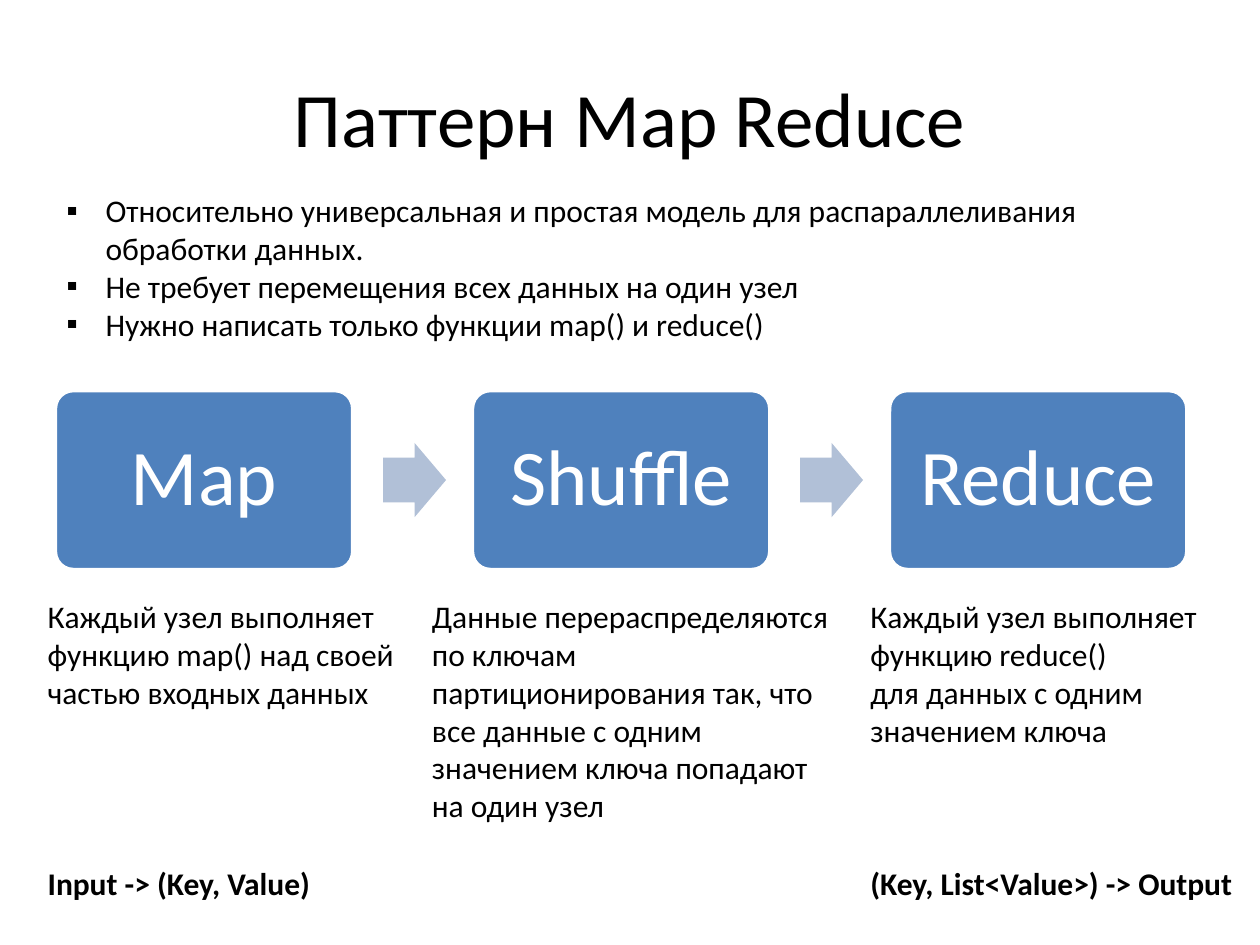
from lxml.etree import SubElement
from pptx import Presentation
from pptx.dml.color import RGBColor
from pptx.enum.shapes import MSO_SHAPE
from pptx.enum.text import MSO_ANCHOR, PP_ALIGN
from pptx.oxml.ns import qn
from pptx.util import Inches, Pt

TITLE = "Паттерн Map Reduce"
BULLETS = [
    "Относительно универсальная и простая модель для распараллеливания обработки данных.",
    "Не требует перемещения всех данных на один узел",
    "Нужно написать только функции map() и reduce()",
]
STEPS = [
    {"name": "Map", "left": 0.28, "width": 3.04, "height": 2.52,
     "lines": ["Каждый узел выполняет", "функцию map() над своей", "частью входных данных"],
     "signature": "Input -> (Key, Value)", "gap": 88},
    {"name": "Shuffle", "left": 3.33, "width": 3.4, "height": 1.92,
     "lines": ["Данные перераспределяются по ключам партиционирования так, "
               "что все данные с одним значением ключа попадают на один узел"]},
    {"name": "Reduce", "left": 6.81, "width": 3.19, "height": 2.52,
     "lines": ["Каждый узел выполняет функцию reduce()", "для данных с одним значением ключа"],
     "signature": "(Key, List<Value>) -> Output", "gap": 66},
]
BLACK, WHITE, BLUE, PALE = "000000", "FFFFFF", "4F81BD", "B1C0D7"
BOX_LEFT, BOX_TOP, BOX_W, BOX_H, STEP = 0.44, 3.1, 2.36, 1.42, 3.31
ARROW_W, ARROW_H, ARROW_OFFSET = 0.5, 0.59, 2.6


def rgb(value):
    return RGBColor.from_string(value)


def add_text(tf, lines, size=18, color=BLACK, align=PP_ALIGN.LEFT):
    tf.word_wrap = True
    paragraphs = []
    for i, line in enumerate(lines):
        p = tf.paragraphs[0] if i == 0 else tf.add_paragraph()
        p.alignment = align
        add_run(p, line, size, color)
        paragraphs.append(p)
    return paragraphs


def add_run(p, text, size, color, bold=False):
    r = p.add_run()
    r.text = text
    r.font.name = "Calibri"
    r.font.size = Pt(size)
    r.font.bold = bold
    r.font.color.rgb = rgb(color)


def add_box(s, left, top, width, height):
    return s.shapes.add_textbox(*map(Inches, (left, top, width, height))).text_frame


def add_shape(s, kind, left, top, width, height, fill, adjustments):
    sp = s.shapes.add_shape(kind, *map(Inches, (left, top, width, height)))
    sp.shadow.inherit = False
    sp.fill.solid()
    sp.fill.fore_color.rgb = rgb(fill)
    for i, value in enumerate(adjustments):
        sp.adjustments[i] = value
    return sp


def add_bullet(p):
    pPr = p._p.get_or_add_pPr()
    pPr.set("marL", str(Inches(0.31)))
    pPr.set("indent", str(-Inches(0.31)))
    SubElement(pPr, qn("a:buFont")).set("typeface", "Calibri")
    SubElement(pPr, qn("a:buChar")).set("char", "▪")


def main():
    prs = Presentation()
    prs.slide_width, prs.slide_height = Inches(10), Inches(7.5)
    s = prs.slides.add_slide(prs.slide_layouts[6])

    tf = add_box(s, 0.5, 0.3, 9, 1.25)
    tf.vertical_anchor = MSO_ANCHOR.MIDDLE
    add_text(tf, [TITLE], 44, align=PP_ALIGN.CENTER)

    for p in add_text(add_box(s, 0.43, 1.47, 9.06, 1.31), BULLETS):
        add_bullet(p)

    for i, step in enumerate(STEPS):
        left = BOX_LEFT + i * STEP
        sp = add_shape(s, MSO_SHAPE.ROUNDED_RECTANGLE, left, BOX_TOP, BOX_W, BOX_H, BLUE, [0.1])
        sp.line.color.rgb = rgb(WHITE)
        sp.line.width = Pt(2)
        sp.text_frame.vertical_anchor = MSO_ANCHOR.MIDDLE
        add_text(sp.text_frame, [step["name"]], 45, WHITE, PP_ALIGN.CENTER)[0].line_spacing = 0.9

        if i < len(STEPS) - 1:
            top = BOX_TOP + (BOX_H - ARROW_H) / 2
            arrow = add_shape(s, MSO_SHAPE.RIGHT_ARROW, left + ARROW_OFFSET, top,
                              ARROW_W, ARROW_H, PALE, [0.6, 0.5])
            arrow.line.fill.background()

        tf = add_box(s, step["left"], 4.69, step["width"], step["height"])
        add_text(tf, step["lines"])
        if "signature" in step:
            p = tf.add_paragraph()
            p.space_before = Pt(step["gap"])
            add_run(p, step["signature"], 18, BLACK, bold=True)

    prs.save("out.pptx")


if __name__ == "__main__":
    main()
